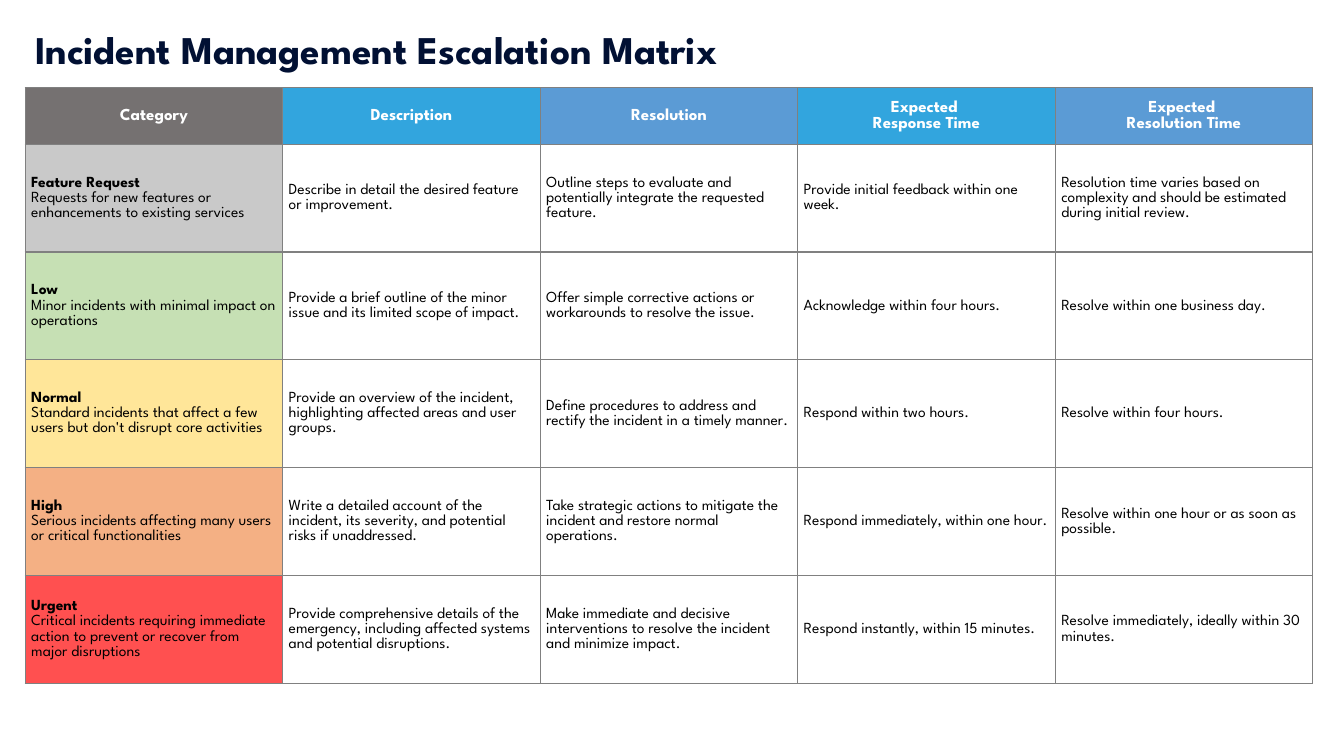
from dataclasses import dataclass

from lxml import etree
from pptx import Presentation
from pptx import util as u
from pptx.dml import color
from pptx.enum import text
from pptx.oxml import ns


@dataclass(frozen=True)
class Theme:
    font: str = "League Spartan"
    title_color: str = "011033"
    header_color: str = "FFFFFF"
    body_color: str = "000000"
    border_color: str = "808080"
    title_size: int = 28
    header_size: int = 12
    body_size: int = 11
    border_width: int = 1
    line_spacing: float = 1.07


@dataclass(frozen=True)
class Header:
    label: str
    fill: str


@dataclass(frozen=True)
class Level:
    name: str
    summary: str
    fill: str
    details: tuple[str, str, str, str]


THEME = Theme()
TABLE_LEFT, TABLE_TOP, TABLE_WIDTH = 0.25, 0.87, 12.77
HEADER_HEIGHT, LEVEL_HEIGHT = 0.56, 1.07

HEADERS = [
    Header("Category", "757171"),
    Header("Description", "32A5DE"),
    Header("Resolution", "5B9BD5"),
    Header("Expected \nResponse Time", "32A5DE"),
    Header("Expected \nResolution Time", "5B9BD5"),
]

LEVELS = [
    Level("Feature Request", "Requests for new features or enhancements to existing services", "C9C9C9", (
        "Describe in detail the desired feature or improvement.",
        "Outline steps to evaluate and potentially integrate the requested feature.",
        "Provide initial feedback within one week.",
        "Resolution time varies based on complexity and should be estimated during initial review.",
    )),
    Level("Low", "Minor incidents with minimal impact on operations", "C6E0B4", (
        "Provide a brief outline of the minor issue and its limited scope of impact.",
        "Offer simple corrective actions or workarounds to resolve the issue.",
        "Acknowledge within four hours.",
        "Resolve within one business day.",
    )),
    Level("Normal", "Standard incidents that affect a few users but don't disrupt core activities", "FFE699", (
        "Provide an overview of the incident, highlighting affected areas and user groups.",
        "Define procedures to address and rectify the incident in a timely manner.",
        "Respond within two hours.",
        "Resolve within four hours.",
    )),
    Level("High", "Serious incidents affecting many users or critical functionalities", "F4B084", (
        "Write a detailed account of the incident, its severity, and potential risks if unaddressed.",
        "Take strategic actions to mitigate the incident and restore normal operations.",
        "Respond immediately, within one hour.",
        "Resolve within one hour or as soon as possible.",
    )),
    Level("Urgent", "Critical incidents requiring immediate action to prevent or recover from major disruptions", "FF5050", (
        "Provide comprehensive details of the emergency, including affected systems and potential disruptions.",
        "Make immediate and decisive interventions to resolve the incident and minimize impact.",
        "Respond instantly, within 15 minutes.",
        "Resolve immediately, ideally within 30 minutes.",
    )),
]


def format_run(run, size: int, rgb: str, bold: bool) -> None:
    run.font.name = THEME.font
    run.font.size = u.Pt(size)
    run.font.bold = bold
    run.font.color.rgb = color.RGBColor.from_string(rgb)


def add_borders(cell) -> None:
    """Put the four border lines ahead of the cell's fill, as the schema requires."""
    properties = cell._tc.get_or_add_tcPr()
    for index, side in enumerate(("lnL", "lnR", "lnT", "lnB")):
        line = etree.Element(ns.qn(f"a:{side}"), w=str(u.Pt(THEME.border_width)))
        fill = etree.SubElement(line, ns.qn("a:solidFill"))
        etree.SubElement(fill, ns.qn("a:srgbClr"), val=THEME.border_color)
        properties.insert(index, line)


def prepare_cell(cell, content: str, fill: str | None = None):
    """Style the cell, write its text and return the paragraph."""
    cell.vertical_anchor = text.MSO_ANCHOR.MIDDLE
    cell.margin_left = cell.margin_right = u.Inches(0.06)
    cell.margin_top = cell.margin_bottom = 0
    if fill:
        cell.fill.solid()
        cell.fill.fore_color.rgb = color.RGBColor.from_string(fill)
    else:
        cell.fill.background()
    add_borders(cell)
    paragraph = cell.text_frame.paragraphs[0]
    paragraph.text = content
    paragraph.line_spacing = THEME.line_spacing
    return paragraph


def fill_header(cell, header: Header) -> None:
    paragraph = prepare_cell(cell, header.label, header.fill)
    paragraph.alignment = text.PP_ALIGN.CENTER
    for run in paragraph.runs:
        format_run(run, THEME.header_size, THEME.header_color, True)


def fill_level(cells: list, level: Level) -> None:
    category = prepare_cell(cells[0], f"{level.name}\n{level.summary}", level.fill)
    for run, bold in zip(category.runs, (True, False)):
        format_run(run, THEME.body_size, THEME.body_color, bold)
    for cell, detail in zip(cells[1:], level.details):
        paragraph = prepare_cell(cell, detail)
        format_run(paragraph.runs[0], THEME.body_size, THEME.body_color, False)


def add_title(slide) -> None:
    box = slide.shapes.add_textbox(u.Inches(0.25), u.Inches(0.2), u.Inches(7.73), u.Inches(0.57))
    frame = box.text_frame
    frame.word_wrap = True
    frame.auto_size = text.MSO_AUTO_SIZE.SHAPE_TO_FIT_TEXT
    frame.text = "Incident Management Escalation Matrix"
    format_run(frame.paragraphs[0].runs[0], THEME.title_size, THEME.title_color, True)


def add_matrix(slide) -> None:
    heights = [HEADER_HEIGHT] + [LEVEL_HEIGHT] * len(LEVELS)
    table = slide.shapes.add_table(
        len(heights), len(HEADERS), u.Inches(TABLE_LEFT), u.Inches(TABLE_TOP),
        u.Inches(TABLE_WIDTH), u.Inches(sum(heights)),
    ).table
    table.first_row = table.horz_banding = False
    for column in table.columns:
        column.width = u.Inches(TABLE_WIDTH / len(HEADERS))
    for row, height in zip(table.rows, heights):
        row.height = u.Inches(height)
    for column_index, header in enumerate(HEADERS):
        fill_header(table.cell(0, column_index), header)
    for row_index, level in enumerate(LEVELS, start=1):
        fill_level(list(table.rows[row_index].cells), level)


def main() -> None:
    presentation = Presentation()
    presentation.slide_width = u.Inches(13.33)
    presentation.slide_height = u.Inches(7.5)
    slide = presentation.slides.add_slide(presentation.slide_layouts[6])
    add_title(slide)
    add_matrix(slide)
    presentation.save("out.pptx")


if __name__ == "__main__":
    main()
